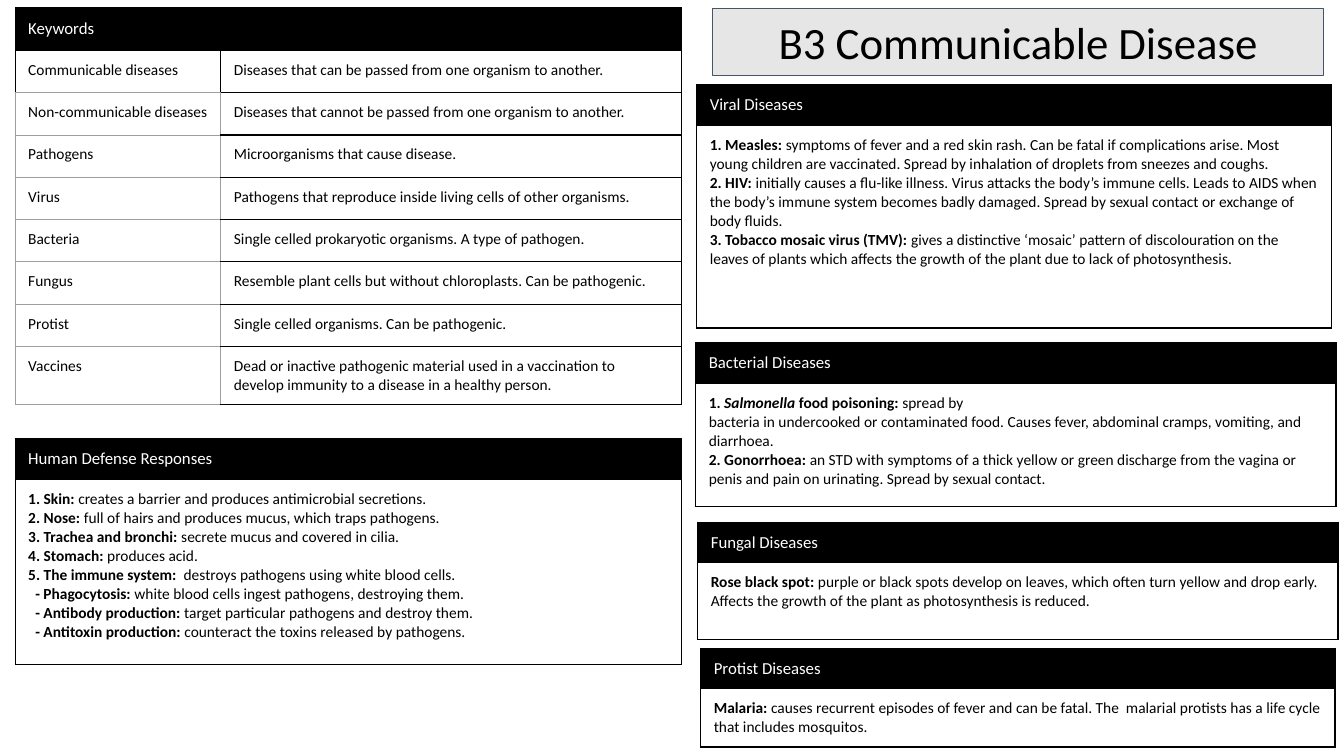
import lxml.etree
import pptx
import pptx.dml.color
import pptx.enum.text
import pptx.oxml.ns
import pptx.util

Inches = pptx.util.Inches
Pt = pptx.util.Pt
RGB = pptx.dml.color.RGBColor
BLACK = RGB(0x00, 0x00, 0x00)
WHITE = RGB(0xFF, 0xFF, 0xFF)
GREY = RGB(0x9E, 0x9E, 0x9E)
PALE = RGB(0xE7, 0xE6, 0xE6)
SLATE = RGB(0x44, 0x54, 0x6A)

TERMS = [
    ("Communicable diseases", "Diseases that can be passed from one organism to another."),
    ("Non-communicable diseases", "Diseases that cannot be passed from one organism to another."),
    ("Pathogens", "Microorganisms that cause disease."),
    ("Virus", "Pathogens that reproduce inside living cells of other organisms."),
    ("Bacteria", "Single celled prokaryotic organisms. A type of pathogen."),
    ("Fungus", "Resemble plant cells but without chloroplasts. Can be pathogenic."),
    ("Protist", "Single celled organisms. Can be pathogenic."),
    ("Vaccines", "Dead or inactive pathogenic material used in a vaccination to develop immunity to a disease in a healthy person."),
]

CARDS = [
    ("Viral Diseases", (6.91, 0.84, 6.3, 2.41), [
        "*1. Measles:* symptoms of fever and a red skin rash. Can be fatal if complications arise. Most young children are vaccinated. Spread by inhalation of droplets from sneezes and coughs.",
        "*2. HIV:* initially causes a flu-like illness. Virus attacks the body’s immune cells. Leads to AIDS when the body’s immune system becomes badly damaged. Spread by sexual contact or exchange of body fluids.",
        "*3. Tobacco mosaic virus (TMV):* gives a distinctive ‘mosaic’ pattern of discolouration on the leaves of plants which affects the growth of the plant due to lack of photosynthesis.",
    ]),
    ("Bacterial Diseases", (6.9, 3.4, 6.35, 1.62), [
        "*1. _Salmonella_ food poisoning:* spread by",
        "bacteria in undercooked or contaminated food. Causes fever, abdominal cramps, vomiting, and diarrhoea.",
        "*2. Gonorrhoea:* an STD with symptoms of a thick yellow or green discharge from the vagina or penis and pain on urinating. Spread by sexual contact.",
    ]),
    ("Fungal Diseases", (6.92, 5.18, 6.35, 1.16), [
        "*Rose black spot:* purple or black spots develop on leaves, which often turn yellow and drop early. Affects the growth of the plant as photosynthesis is reduced.",
    ]),
    ("Protist Diseases", (6.95, 6.43, 6.29, 0.97), [
        "*Malaria:* causes recurrent episodes of fever and can be fatal. The  malarial protists has a life cycle that includes mosquitos.",
    ]),
    ("Human Defense Responses", (0.15, 4.35, 6.61, 2.24), [
        "*1. Skin:* creates a barrier and produces antimicrobial secretions.",
        "*2. Nose:* full of hairs and produces mucus, which traps pathogens.",
        "*3. Trachea and bronchi:* secrete mucus and covered in cilia.",
        "*4. Stomach:* produces acid.",
        "*5. The immune system:*  destroys pathogens using white blood cells.",
        "*- Phagocytosis:* white blood cells ingest pathogens, destroying them.",
        "*- Antibody production:* target particular pathogens and destroy them.",
        "*- Antitoxin production:* counteract the toxins released by pathogens.",
    ]),
]


def apply(item, form):
    for key, value in form.items():
        setattr(item, key, value)


def add(node, tag, **attrs):
    return lxml.etree.SubElement(node, pptx.oxml.ns.qn(tag), **attrs)


class Sheet:
    head = {"size": Pt(12), "name": "Calibri"}
    body = {"size": Pt(11), "name": "Calibri"}
    title = {"size": Pt(32), "name": "Calibri", "bold": False}
    inset = {"margin_left": Inches(0.13), "margin_right": Inches(0.13),
             "margin_top": Inches(0.1), "margin_bottom": Inches(0.1)}
    plain = {"first_row": False, "horz_banding": False}

    def __init__(self, deck):
        self.slide = deck.slides.add_slide(deck.slide_layouts[5])

    def prose(self, frame, lines, form, tint):
        for pos, line in enumerate(lines):
            para = frame.add_paragraph() if pos else frame.paragraphs[0]
            if line.startswith("*- "):
                para._p.get_or_add_pPr().set("marL", str(Inches(0.07)))
            for turn, part in enumerate(line.split("*")):
                for tilt, words in enumerate(part.split("_")):
                    if words:
                        run = para.add_run()
                        run.text = words
                        apply(run.font, {"bold": turn % 2 == 1,
                                         "italic": tilt % 2 == 1, **form})
                        run.font.color.rgb = tint

    def banner(self, words, box):
        shape = self.slide.shapes.title
        apply(shape, dict(zip(("left", "top", "width", "height"), map(Inches, box))))
        form = add(shape._element.spPr, "a:prstGeom", prst="roundRect")
        add(form, "a:avLst")
        shape.fill.solid()
        shape.fill.fore_color.rgb = PALE
        shape.line.color.rgb = SLATE
        shape.line.width = Pt(0.75)
        frame = shape.text_frame
        apply(frame, {**self.inset, "margin_top": Inches(0.13),
                      "margin_bottom": Inches(0.13), "word_wrap": True,
                      "auto_size": pptx.enum.text.MSO_AUTO_SIZE.NONE,
                      "vertical_anchor": pptx.enum.text.MSO_ANCHOR.MIDDLE})
        self.prose(frame, [words], self.title, BLACK)
        frame.paragraphs[0].alignment = pptx.enum.text.PP_ALIGN.CENTER

    def grid(self, left, top, cols, rows):
        table = self.slide.shapes.add_table(
            len(rows), len(cols), Inches(left), Inches(top),
            Inches(sum(cols)), Inches(sum(rows))).table
        apply(table, self.plain)
        for col, width in zip(table.columns, cols):
            col.width = Inches(width)
        for row, height in zip(table.rows, rows):
            row.height = Inches(height)
        return table

    def cell(self, cell, lines, top=False, soft=""):
        apply(cell, self.inset)
        props = cell._tc.get_or_add_tcPr()
        for side in "LRTB":
            tint, width = (GREY, 0.75) if side in soft else (BLACK, 1)
            line = add(props, "a:ln" + side, w=str(Pt(width)))
            add(add(line, "a:solidFill"), "a:srgbClr", val=str(tint))
        cell.fill.solid()
        cell.fill.fore_color.rgb = BLACK if top else WHITE
        form, tint = (self.head, WHITE) if top else (self.body, BLACK)
        self.prose(cell.text_frame, lines, form, tint)

    def terms(self, name, pairs):
        table = self.grid(0.15, 0.08, [2.04, 4.57], [0.42] * len(pairs) + [0.56])
        table.cell(0, 0).merge(table.cell(0, 1))
        self.cell(table.cell(0, 0), [name], True)
        self.cell(table.cell(0, 1), [], True)
        for row, pair in enumerate(pairs, 1):
            edges = ("B", "") if row == 1 else ("LRTB", "L")
            for col, words in enumerate(pair):
                self.cell(table.cell(row, col), [words], soft=edges[col])

    def card(self, name, box, lines):
        left, top, width, height = box
        table = self.grid(left, top, [width], [0.4, height - 0.4])
        self.cell(table.cell(0, 0), [name], True)
        self.cell(table.cell(1, 0), lines)


def main():
    deck = pptx.Presentation()
    apply(deck, {"slide_width": Inches(13.33), "slide_height": Inches(7.5)})
    sheet = Sheet(deck)
    sheet.banner("B3 Communicable Disease", (7.07, 0.08, 6.06, 0.67))
    sheet.terms("Keywords", TERMS)
    for card in CARDS:
        sheet.card(*card)
    deck.save("out.pptx")


if __name__ == "__main__":
    main()
